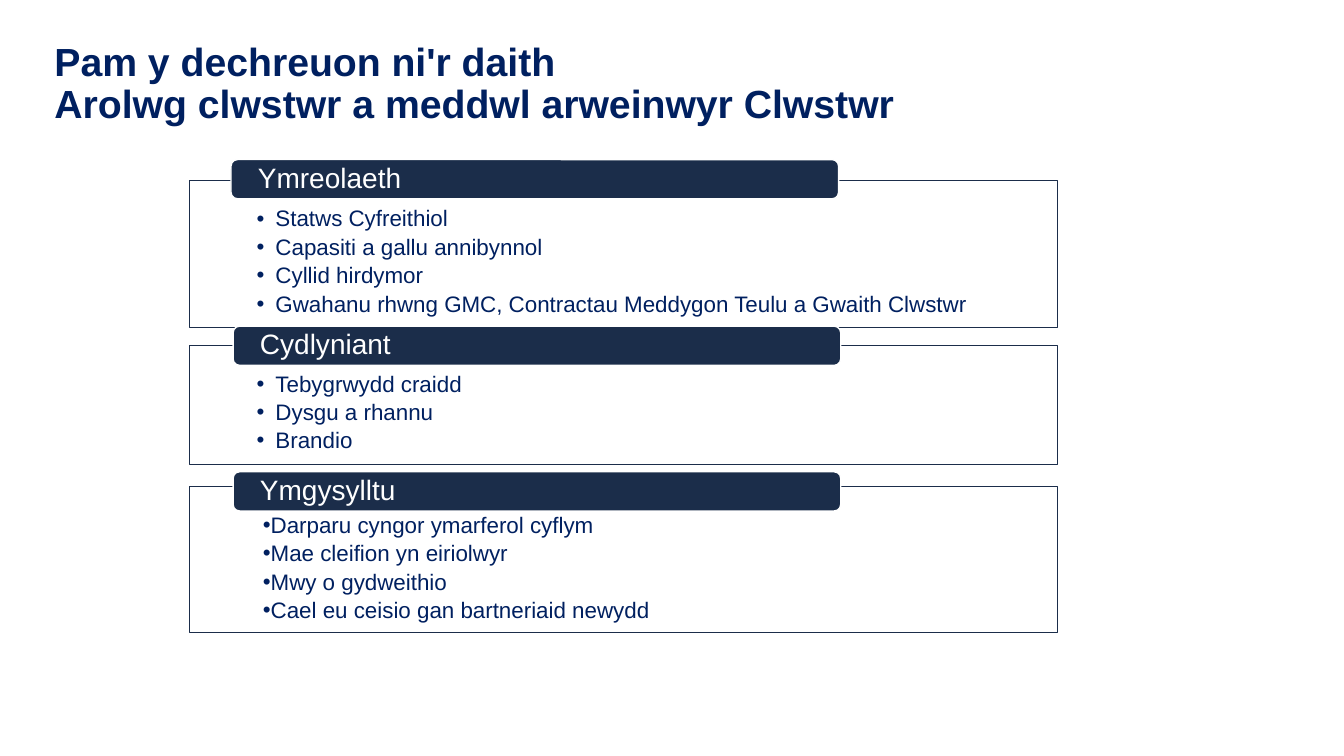
"""Build the slide on why the cluster journey began, with three titled panels."""
from copy import deepcopy

from lxml.etree import SubElement
from pptx import Presentation
from pptx.dml.color import RGBColor
from pptx.enum.shapes import MSO_SHAPE
from pptx.enum.text import MSO_ANCHOR, PP_ALIGN
from pptx.oxml.ns import qn
from pptx.util import Pt

NAVY, INK, WHITE = "1B2D4A", "002060", "FFFFFF"


def write(frame, lines, size, color, bold=False, anchor=MSO_ANCHOR.MIDDLE,
          insets=(7.2, 3.6, 7.2, 3.6), after=0, bullet=None):
    frame.word_wrap = True
    frame.vertical_anchor = anchor
    (frame.margin_left, frame.margin_top,
     frame.margin_right, frame.margin_bottom) = map(Pt, insets)
    for index, line in enumerate(lines):
        paragraph = frame.paragraphs[0] if index == 0 else frame.add_paragraph()
        paragraph.text = line
        if bullet:
            margin, indent = bullet
            paragraph.level = 1
            properties = paragraph._p.get_or_add_pPr()
            properties.set("marL", str(Pt(margin)))
            properties.set("indent", str(Pt(indent)))
            SubElement(properties, qn("a:buFont"), typeface="Arial")
            SubElement(properties, qn("a:buChar"), char="•")
        paragraph.alignment = PP_ALIGN.LEFT
        paragraph.line_spacing = 0.9
        paragraph.space_before = Pt(0)
        paragraph.space_after = Pt(after)
        for run in paragraph.runs:
            run.font.name = "Arial"
            run.font.size = Pt(size)
            run.font.bold = bold
            run.font.color.rgb = RGBColor.from_string(color)
        for line_break in paragraph._p.findall(qn("a:br")):
            line_break.append(deepcopy(paragraph.runs[0].font._element))


def add_box(preset, left, top, width, height, fill, outline):
    box = slide.shapes.add_shape(preset, Pt(left), Pt(top), Pt(width), Pt(height))
    box.shadow.inherit = False
    box.fill.solid()
    box.fill.fore_color.rgb = RGBColor.from_string(fill)
    box.line.color.rgb = RGBColor.from_string(outline)
    box.line.width = Pt(1)
    return box


presentation = Presentation()
presentation.slide_width, presentation.slide_height = Pt(960), Pt(540)
slide = presentation.slides.add_slide(presentation.slide_layouts[5])

heading = slide.shapes.title
heading.left, heading.top, heading.width, heading.height = Pt(31.7), Pt(35.3), Pt(828), Pt(50.4)
write(heading.text_frame,
      ["Pam y dechreuon ni'r daith\vArolwg clwstwr a meddwl arweinwyr Clwstwr"],
      size=28, color=INK, bold=True)

HANGING, FLUSH = (13.5, -13.5), (4.5, 0)
themes = [
    ("Ymreolaeth", 165, 114, 128.8, 105.2, HANGING,
     ["Statws Cyfreithiol", "Capasiti a gallu annibynnol", "Cyllid hirdymor",
      "Gwahanu rhwng GMC, Contractau Meddygon Teulu a Gwaith Clwstwr"]),
    ("Cydlyniant", 166.5, 233, 246.8, 85, HANGING,
     ["Tebygrwydd craidd", "Dysgu a rhannu", "Brandio"]),
    ("Ymgysylltu", 166.5, 337, 347.6, 104.3, FLUSH,
     ["Darparu cyngor ymarferol cyflym", "Mae cleifion yn eiriolwyr",
      "Mwy o gydweithio", "Cael eu ceisio gan bartneriaid newydd"]),
]

for theme, tab_left, tab_top, panel_top, panel_height, bullet, points in themes:
    panel = add_box(MSO_SHAPE.RECTANGLE, 135.2, panel_top, 620, panel_height, WHITE, NAVY)
    panel_color = panel.fill._xPr.find(qn("a:solidFill"))[0]
    SubElement(panel_color, qn("a:alpha"), val="90000")
    write(panel.text_frame, points, size=16, color=INK, anchor=MSO_ANCHOR.TOP,
          insets=(48.1, 19.5, 48.1, 8.5), after=3, bullet=bullet)
    tab = add_box(MSO_SHAPE.ROUNDED_RECTANGLE, tab_left, tab_top, 434, 28, NAVY, WHITE)
    write(tab.text_frame, [theme], size=20, color=WHITE, insets=(17.8, 0, 17.8, 0))

presentation.save("out.pptx")
